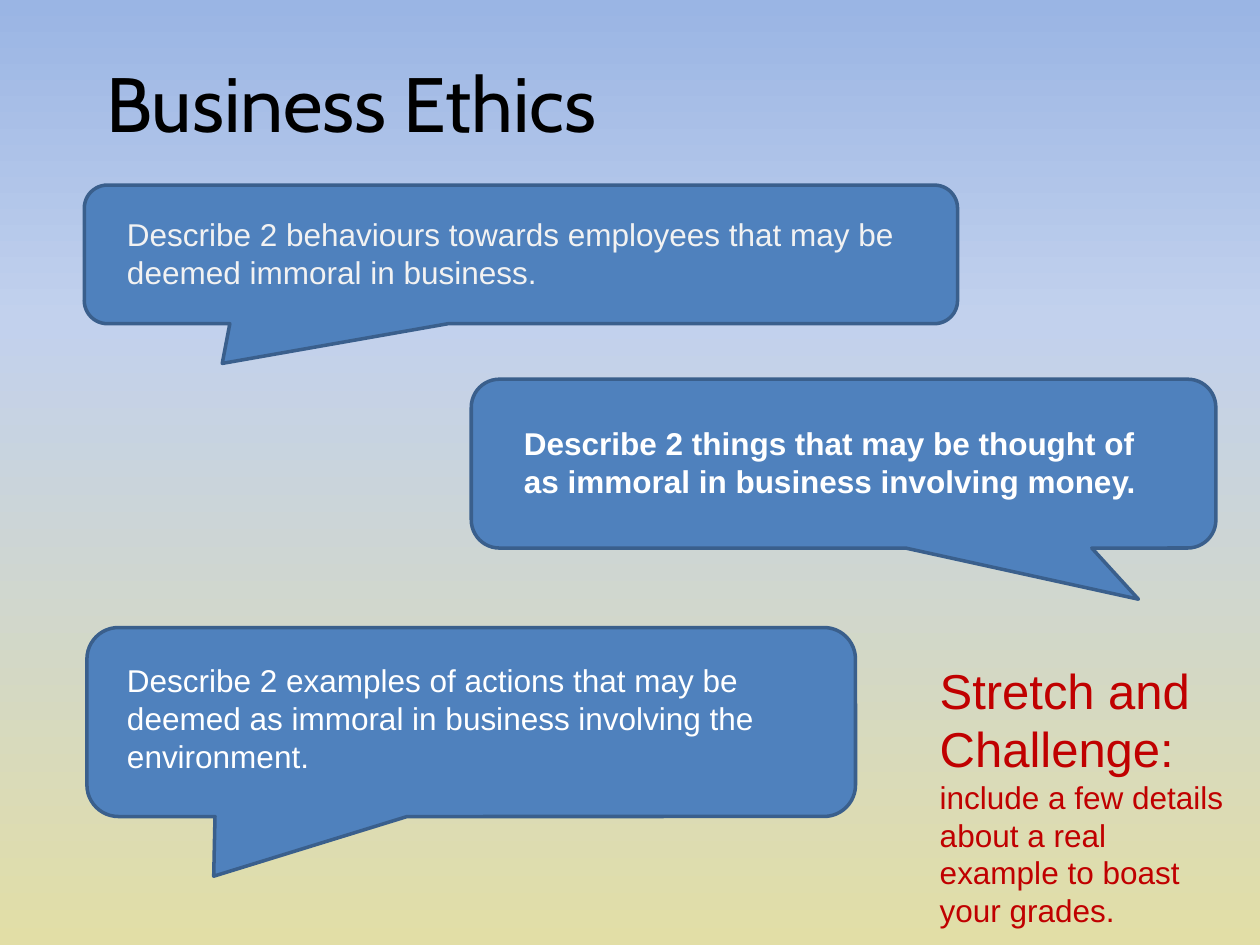
from copy import deepcopy
from typing import NamedTuple

from pptx import Presentation
from pptx.dml.color import RGBColor
from pptx.enum.shapes import MSO_SHAPE
from pptx.enum.text import MSO_ANCHOR, PP_ALIGN
from pptx.slide import Slide
from pptx.text.text import TextFrame
from pptx.util import Pt

CALLOUT_FILL = "4F81BD"
CALLOUT_LINE = "3A5F8C"
CHALLENGE_RED = "C00000"
SKY_TO_SAND = [(0, "9AB5E4"), (0.34, "C2D1ED"), (1, "E2DEA6")]


class Box(NamedTuple):
    left: float
    top: float
    width: float
    height: float


class Style(NamedTuple):
    size: float
    color: str
    font: str = "Arial"
    bold: bool = False


class Question(NamedTuple):
    bubble: Box
    tail: tuple[float, float]
    wording_box: Box
    wording: str
    style: Style


QUESTIONS = [
    Question(Box(48.2, 105.8, 499, 79.2), (-0.342, 0.787),
             Box(65.5, 119.5, 465.1, 51.1),
             "Describe 2 behaviours towards employees that may be deemed immoral in business.",
             Style(18, "F2F2F2")),
    Question(Box(269.3, 216.7, 425.5, 96.5), (0.396, 0.803),
             Box(292.3, 239, 380.2, 51.1),
             "Describe 2 things that may be thought of as immoral in business involving money.",
             Style(18, "FFFFFF", bold=True)),
    Question(Box(49.7, 358.6, 439.2, 108), (-0.335, 0.816),
             Box(65.5, 374.4, 391, 72.7),
             "Describe 2 examples of actions that may be deemed as immoral in business "
             "involving the environment.",
             Style(18, "FFFFFF")),
]


def rgb(hex_color: str) -> RGBColor:
    return RGBColor.from_string(hex_color)


def points(box: Box) -> list[Pt]:
    return [Pt(length) for length in box]


def paint_background(slide: Slide) -> None:
    """Fill the slide with a vertical gradient from top to bottom."""
    fill = slide.background.fill
    fill.gradient()
    fill.gradient_angle = 270
    stop_list = slide.element.xpath(".//a:gsLst")[0]
    stop_list.append(deepcopy(stop_list[-1]))
    for stop, (position, color) in zip(fill.gradient_stops, SKY_TO_SAND):
        stop.position = position
        stop.color.rgb = rgb(color)


def add_text(slide: Slide, box: Box, pieces: list[tuple[str, Style]]) -> TextFrame:
    """Add a wrapping text box with one paragraph of styled pieces."""
    frame = slide.shapes.add_textbox(*points(box)).text_frame
    frame.word_wrap = True
    for wording, style in pieces:
        run = frame.paragraphs[0].add_run()
        run.text = wording
        run.font.name = style.font
        run.font.size = Pt(style.size)
        run.font.bold = style.bold
        run.font.color.rgb = rgb(style.color)
    return frame


def add_question(slide: Slide, question: Question) -> None:
    bubble = slide.shapes.add_shape(MSO_SHAPE.ROUNDED_RECTANGULAR_CALLOUT,
                                    *points(question.bubble))
    bubble.adjustments[0], bubble.adjustments[1] = question.tail
    bubble.shadow.inherit = False
    bubble.fill.solid()
    bubble.fill.fore_color.rgb = rgb(CALLOUT_FILL)
    bubble.line.color.rgb = rgb(CALLOUT_LINE)
    bubble.line.width = Pt(2)
    add_text(slide, question.wording_box, [(question.wording, question.style)])


def main() -> None:
    deck = Presentation()
    deck.slide_width, deck.slide_height = Pt(720), Pt(540)
    slide = deck.slides.add_slide(deck.slide_layouts[6])
    paint_background(slide)

    title = add_text(slide, Box(36, 21.6, 329.8, 72.7),
                     [("Business Ethics", Style(44, "000000", "Cabin"))])
    title.vertical_anchor = MSO_ANCHOR.MIDDLE
    title.paragraphs[0].alignment = PP_ALIGN.CENTER

    for question in QUESTIONS:
        add_question(slide, question)

    add_text(slide, Box(529.9, 373.7, 181.4, 162.7), [
        ("Stretch and Challenge: ", Style(28, CHALLENGE_RED)),
        ("include a few details about a real example to boast your grades.",
         Style(18, CHALLENGE_RED)),
    ])
    deck.save("out.pptx")


if __name__ == "__main__":
    main()
